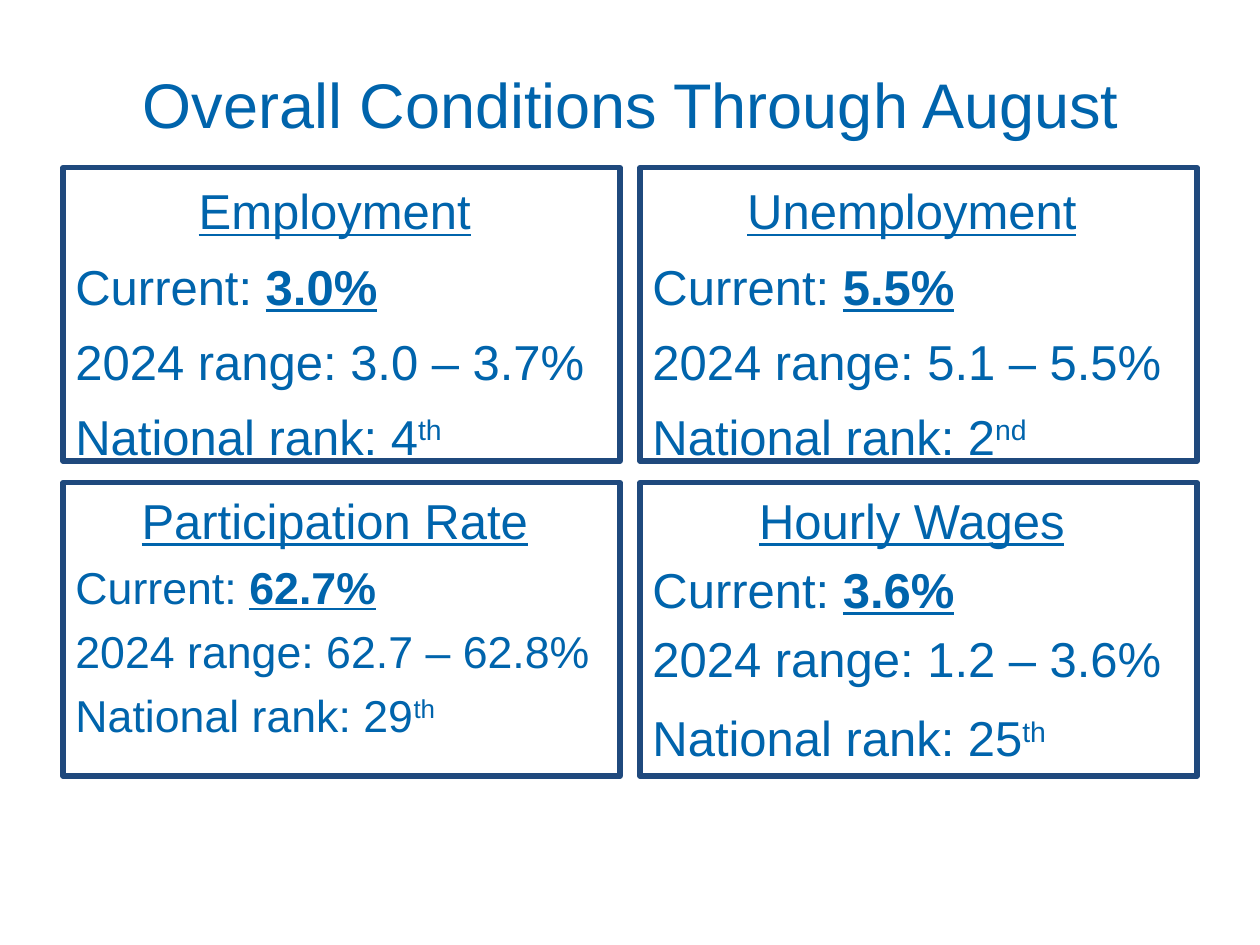
from pptx import Presentation
from pptx.dml.color import RGBColor
from pptx.enum.shapes import MSO_SHAPE
from pptx.enum.text import MSO_ANCHOR, PP_ALIGN
from pptx.util import Inches, Pt

TEXT, EDGE = "0064AC", "1F497D"
LEFT, TOP = 0.5, 1.33
WIDTH, HEIGHT = 4.42, 2.33
GAP_X, GAP_Y = 0.16, 0.17

# heading, current, range, rank, suffix, body size, line spacing, space before rank
PANELS = [
    ("Employment", "3.0%", "3.0 – 3.7%", "4", "th", 28, 1.1, 0),
    ("Unemployment", "5.5%", "5.1 – 5.5%", "2", "nd", 28, 1.1, 0),
    ("Participation Rate", "62.7%", "62.7 – 62.8%", "29", "th", 25.5, 1.0, 0),
    ("Hourly Wages", "3.6%", "1.2 – 3.6%", "25", "th", 28, 1.0, 5.6),
]


def color(code):
    return RGBColor.from_string(code)


def style(font, size):
    font.name = "Arial"
    font.size = Pt(size)
    font.color.rgb = color(TEXT)


def add_run(para, text, size, bold=False, under=False, raised=False):
    run = para.add_run()
    run.text = text
    style(run.font, size)
    run.font.bold = bold
    run.font.underline = under
    if raised:
        run._r.get_or_add_rPr().set("baseline", "30000")


def add_title(slide, text):
    title = slide.shapes.title
    title.left, title.top = Inches(0.34), Inches(0.09)
    title.width, title.height = Inches(9.33), Inches(1.08)
    frame = title.text_frame
    frame.text = text
    frame.word_wrap = True
    frame.vertical_anchor = MSO_ANCHOR.BOTTOM
    para = frame.paragraphs[0]
    para.alignment = PP_ALIGN.CENTER
    style(para.runs[0].font, 36)


def add_box(slide, col, row):
    box = slide.shapes.add_shape(
        MSO_SHAPE.RECTANGLE,
        Inches(LEFT + col * (WIDTH + GAP_X)), Inches(TOP + row * (HEIGHT + GAP_Y)),
        Inches(WIDTH), Inches(HEIGHT))
    box.shadow.inherit = False
    box.fill.background()
    box.line.color.rgb = color(EDGE)
    box.line.width = Pt(3)
    frame = box.text_frame
    frame.word_wrap = True
    frame.vertical_anchor = MSO_ANCHOR.TOP
    frame.margin_left = frame.margin_right = Inches(0.1)
    frame.margin_top = Inches(0.06)
    return frame


def add_panel(slide, col, row, panel):
    head, now, span, rank, suffix, size, spacing, before = panel
    frame = add_box(slide, col, row)
    lines = [
        [(head, 28, False, True), (" ", 28)],
        [("Current: ", size), (now, size, True, True)],
        [("2024 range: " + span, size)],
        [("National rank: " + rank, size), (suffix, size, False, False, True)],
    ]
    for i, runs in enumerate(lines):
        para = frame.add_paragraph() if i else frame.paragraphs[0]
        para.alignment = PP_ALIGN.LEFT if i else PP_ALIGN.CENTER
        para.line_spacing = spacing
        para.space_after = Pt(6)
        for run in runs:
            add_run(para, *run)
    para.space_before = Pt(before)


def main():
    deck = Presentation()
    deck.slide_width, deck.slide_height = Inches(10), Inches(7.5)
    slide = deck.slides.add_slide(deck.slide_layouts[5])
    add_title(slide, "Overall Conditions Through August")
    for i, panel in enumerate(PANELS):
        row, col = divmod(i, 2)
        add_panel(slide, col, row, panel)
    deck.save("out.pptx")


if __name__ == "__main__":
    main()
